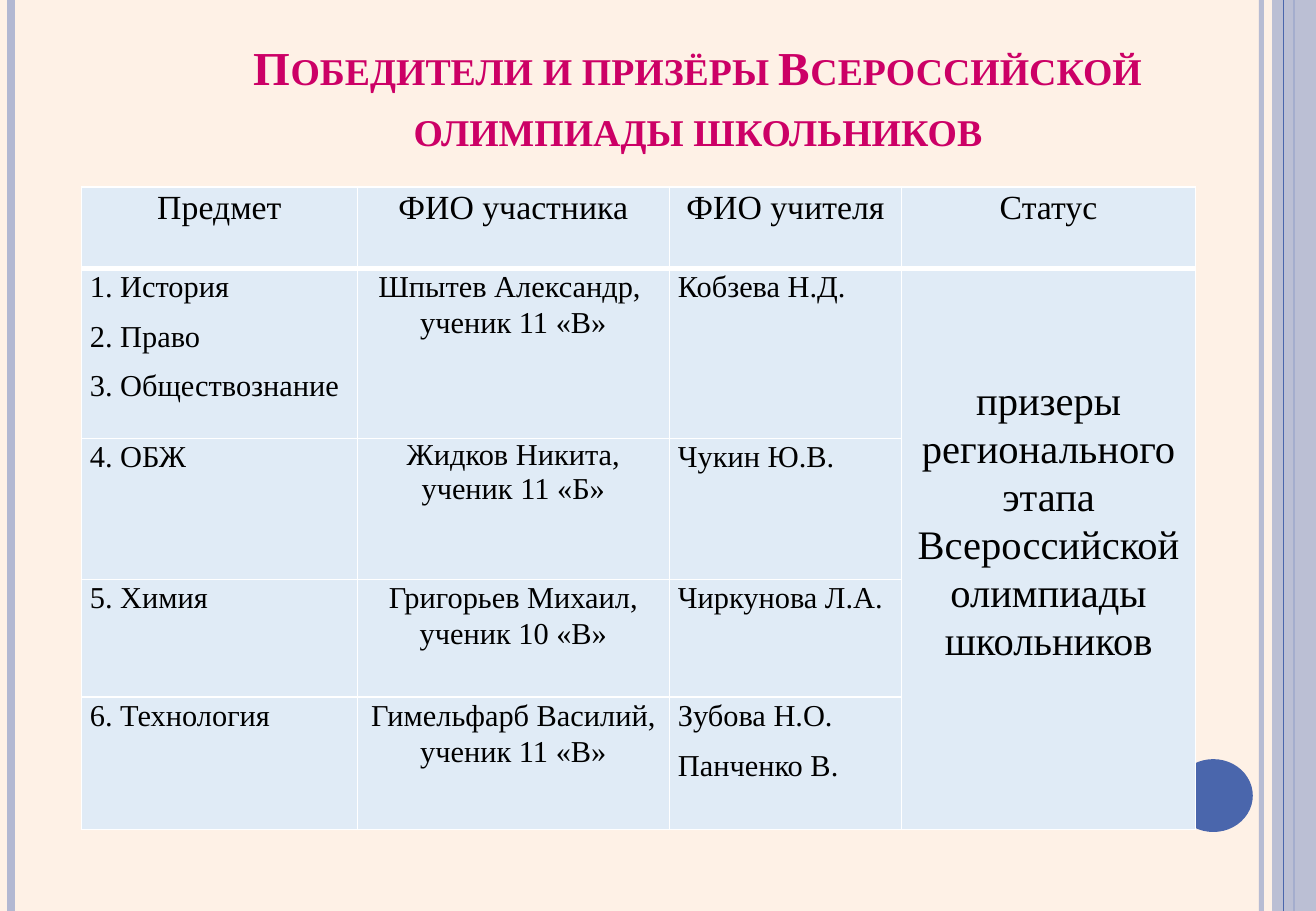
from dataclasses import dataclass

from lxml.etree import SubElement
from pptx import Presentation
from pptx.dml.color import RGBColor
from pptx.enum.shapes import MSO_CONNECTOR as Connector, MSO_SHAPE as Shape
from pptx.enum.text import MSO_ANCHOR as Anchor, PP_ALIGN as Align
from pptx.oxml.ns import qn
from pptx.util import Inches, Pt


@dataclass(frozen=True)
class Theme:
    font: str = "Times New Roman"
    background: str = "FEF1E6"
    stripe: str = "B2B8D2"
    accent: str = "4A66AC"
    title: str = "CC0066"
    text: str = "000000"
    cell: str = "E0EBF6"
    border: str = "FFFFFF"
    title_size: int = 28
    header_size: int = 20
    body_size: int = 18
    status_size: int = 24
    leading: float = 1.07
    gap: int = 8


THEME = Theme()
WIDTH, HEIGHT = 10.83, 7.5
HEADERS = ["Предмет", "ФИО участника", "ФИО учителя", "Статус"]
COLUMN_WIDTHS = [2.27, 2.57, 1.91, 2.42]
ROW_HEIGHTS = [0.67, 1.4, 1.16, 0.97, 1.09]
WINNERS = [
    (["1. История", "2. Право", "3. Обществознание"],
     ["Шпытев Александр, ", "ученик 11 «В»"], ["Кобзева Н.Д."]),
    (["4. ОБЖ"], ["Жидков Никита,", "ученик 11 «Б»"], ["Чукин Ю.В."]),
    (["5. Химия"], ["Григорьев Михаил,", "ученик 10 «В»"], ["Чиркунова Л.А."]),
    (["6. Технология"], ["Гимельфарб Василий,", "ученик 11 «В»"],
     ["Зубова Н.О.", "Панченко В."]),
]
STATUS = ["призеры регионального этапа Всероссийской", "олимпиады школьников"]


def color(value):
    return RGBColor.from_string(value)


def set_alpha(properties, percent):
    for element in properties.iter(qn("a:srgbClr")):
        SubElement(element, qn("a:alpha"), val=str(percent * 1000))


def add_run(paragraph, text, size, tint=THEME.text, bold=False):
    run = paragraph.add_run()
    run.text = text
    run.font.name = THEME.font
    run.font.size = Pt(size)
    run.font.bold = bold
    run.font.color.rgb = color(tint)
    return run


def write_lines(frame, lines, size, align, gap=0, leading=THEME.leading):
    for index, text in enumerate(lines):
        paragraph = frame.paragraphs[0] if index == 0 else frame.add_paragraph()
        paragraph.alignment = align
        paragraph.line_spacing = leading
        paragraph.space_after = Pt(gap)
        add_run(paragraph, text, size)


def add_stripe(slide, x, top, height, tint, weight, alpha=100):
    stripe = slide.shapes.add_connector(
        Connector.STRAIGHT, Inches(x), Inches(top), Inches(x), Inches(top + height))
    stripe.line.color.rgb = color(tint)
    stripe.line.width = Pt(weight)
    properties = stripe._element.spPr
    SubElement(properties, qn("a:effectLst"))
    if alpha < 100:
        set_alpha(properties, alpha)


def add_solid(slide, kind, left, top, width, height, tint, alpha=100):
    shape = slide.shapes.add_shape(
        kind, Inches(left), Inches(top), Inches(width), Inches(height))
    shape.shadow.inherit = False
    shape.fill.solid()
    shape.fill.fore_color.rgb = color(tint)
    shape.line.fill.background()
    if alpha < 100:
        set_alpha(shape._element.spPr, alpha)


def add_decoration(slide, left, top, width, height):
    right = left + width
    add_stripe(slide, right - 0.45, top, height, THEME.stripe, 3, 93)
    add_stripe(slide, left + 0.09, top, height, THEME.stripe, 4.5)
    add_stripe(slide, right - 0.18, top, height, THEME.accent, 1.5)
    add_solid(slide, Shape.RECTANGLE, right - 0.36, top, 0.36, height, THEME.stripe, 87)
    add_stripe(slide, right - 0.27, top, height, THEME.accent, 0.75)
    add_solid(slide, Shape.OVAL, right - 1.17, top + height - 1.25, 0.65, 0.6, THEME.accent)


def add_title(slide, left, top, width, height):
    box = slide.shapes.add_textbox(
        Inches(left), Inches(top), Inches(width), Inches(height))
    frame = box.text_frame
    frame.word_wrap = True
    frame.vertical_anchor = Anchor.BOTTOM
    paragraph = frame.paragraphs[0]
    paragraph.alignment = Align.CENTER
    paragraph.line_spacing = THEME.leading
    run = add_run(paragraph, "Победители и призёры Всероссийской олимпиады школьников",
                  THEME.title_size, THEME.title, True)
    run._r.get_or_add_rPr().set("cap", "small")


def style_cell(cell, row):
    properties = cell._tc.get_or_add_tcPr()
    weights = {"L": 1, "R": 1, "T": 3 if row == 1 else 1, "B": 3 if row == 0 else 1}
    for side, weight in weights.items():
        line = SubElement(properties, qn(f"a:ln{side}"), w=str(Pt(weight)))
        fill = SubElement(line, qn("a:solidFill"))
        SubElement(fill, qn("a:srgbClr"), val=THEME.border)
    cell.fill.solid()
    cell.fill.fore_color.rgb = color(THEME.cell)
    cell.margin_left = cell.margin_right = Inches(0.07)
    cell.margin_top = cell.margin_bottom = 0
    cell.vertical_anchor = Anchor.TOP


def add_winners_table(slide, left, top, width, height):
    table = slide.shapes.add_table(
        len(ROW_HEIGHTS), len(COLUMN_WIDTHS),
        Inches(left), Inches(top), Inches(width), Inches(height)).table
    table.first_row = table.horz_banding = False
    for column, share in zip(table.columns, COLUMN_WIDTHS):
        column.width = Inches(width * share / sum(COLUMN_WIDTHS))
    for row, share in zip(table.rows, ROW_HEIGHTS):
        row.height = Inches(height * share / sum(ROW_HEIGHTS))
    for row in range(len(ROW_HEIGHTS)):
        for column in range(len(COLUMN_WIDTHS)):
            style_cell(table.cell(row, column), row)

    for column, header in enumerate(HEADERS):
        write_lines(table.cell(0, column).text_frame, [header],
                    THEME.header_size, Align.CENTER, THEME.gap)
    for row, (subjects, student, teachers) in enumerate(WINNERS, start=1):
        leading = 1.0 if row == 2 else THEME.leading
        write_lines(table.cell(row, 0).text_frame, subjects,
                    THEME.body_size, Align.LEFT, THEME.gap)
        write_lines(table.cell(row, 1).text_frame, student,
                    THEME.body_size, Align.CENTER, leading=leading)
        write_lines(table.cell(row, 2).text_frame, teachers,
                    THEME.body_size, Align.LEFT, THEME.gap)

    status = table.cell(1, 3)
    status.merge(table.cell(len(WINNERS), 3))
    status.margin_top = Inches(0.89)
    write_lines(status.text_frame, STATUS, THEME.status_size, Align.CENTER)


def build_winners_slide(presentation):
    slide = presentation.slides.add_slide(presentation.slide_layouts[6])
    slide.background.fill.solid()
    slide.background.fill.fore_color.rgb = color(THEME.background)
    add_decoration(slide, 0, 0, WIDTH, HEIGHT)
    add_title(slide, 1.58, 0.25, 8.33, 1.08)
    add_winners_table(slide, 0.67, 1.54, 9.17, 5.29)


def main():
    presentation = Presentation()
    presentation.slide_width = Inches(WIDTH)
    presentation.slide_height = Inches(HEIGHT)
    build_winners_slide(presentation)
    presentation.save("out.pptx")


if __name__ == "__main__":
    main()
